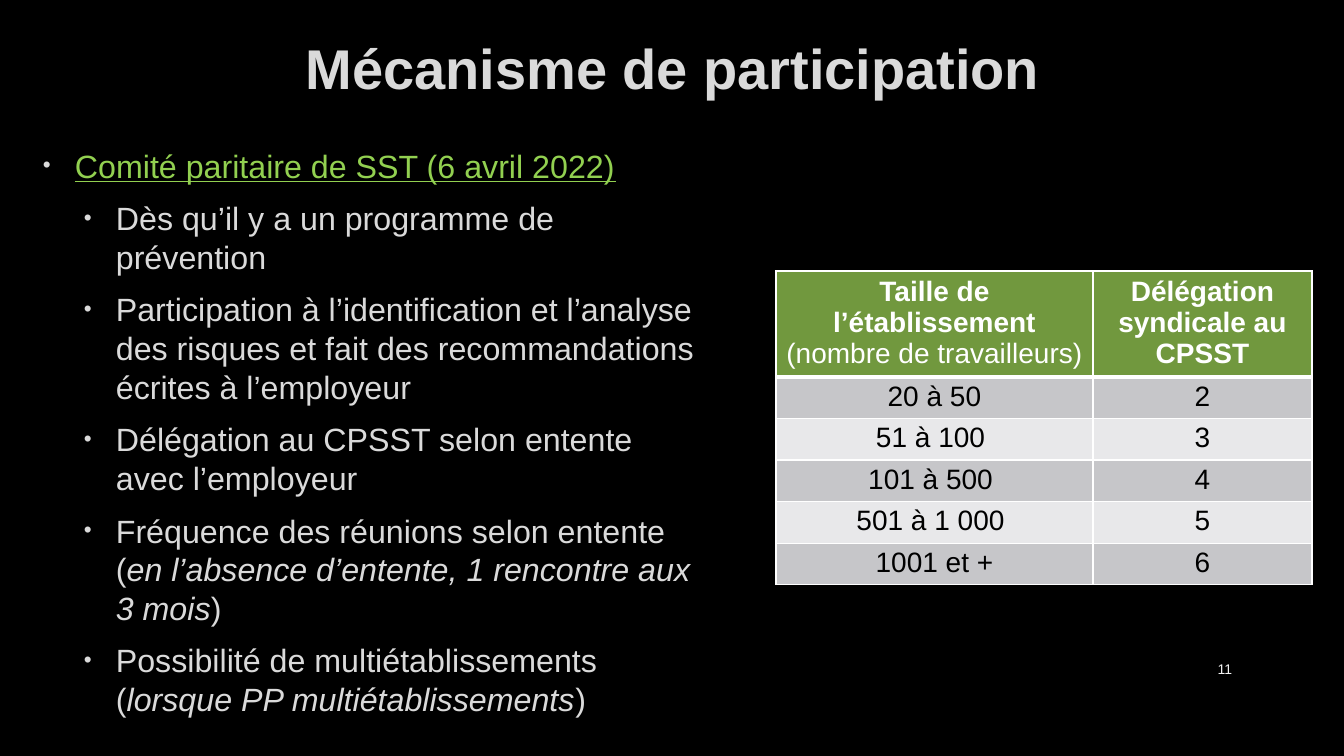
from lxml.etree import SubElement
from pptx import Presentation
from pptx.dml.color import RGBColor
from pptx.enum.text import MSO_ANCHOR as Anchor, PP_ALIGN as Align
from pptx.oxml.ns import qn
from pptx.util import Pt

PX = 914400 / 100.8
LIGHT, LIME, WHITE, BLACK = "DADADA", "92D050", "FFFFFF", "000000"
HEADER, BANDS = "71983E", ("C6C6C9", "E8E8EA")

POINTS = [
    ["Dès qu’il y a un programme de prévention"],
    ["Participation à l’identification et l’analyse des risques "
     "et fait des recommandations écrites à l’employeur"],
    ["Délégation au CPSST selon entente avec l’employeur"],
    ["Fréquence des réunions selon entente (",
     "en l’absence d’entente, 1 rencontre aux 3 mois", ")"],
    ["Possibilité de multiétablissements (",
     "lorsque PP multiétablissements", ")"],
]
HEADINGS = [["Taille de l’établissement", "(nombre de travailleurs)"],
            ["Délégation syndicale au CPSST"]]
DELEGATES = [("20 à 50", "2"), ("51 à 100 ", "3"), ("101 à 500 ", "4"),
             ("501 à 1 000 ", "5"), ("1001 et +", "6")]


def px(n):
    """Turn pixels into EMU."""
    return round(n * PX)


def rgb(color):
    """Turn a hex string into a colour."""
    return RGBColor.from_string(color)


def add_run(p, text, size, color, bold=False, italic=False, underline=False):
    """Add one formatted run to a paragraph."""
    r = p.add_run()
    r.text = text
    f = r.font
    f.name, f.size, f.color.rgb = "Arial", Pt(size), rgb(color)
    f.bold, f.italic, f.underline = bold, italic, underline


def add_box(s, box, anchor=Anchor.TOP):
    """Add a wrapping text box and return its text frame."""
    tf = s.shapes.add_textbox(*map(px, box)).text_frame
    tf.word_wrap, tf.vertical_anchor = True, anchor
    return tf


def add_line(s, box, align, text, size, color, bold=False):
    """Add a vertically centred single-line text."""
    p = add_box(s, box, Anchor.MIDDLE).paragraphs[0]
    p.alignment = align
    add_run(p, text, size, color, bold)


def set_bullet(p, level):
    """Give a paragraph its indent, spacing and small bullet."""
    p.level = level
    p.space_before, p.space_after = Pt(4), Pt(6)
    pPr = p._p.get_or_add_pPr()
    pPr.set("marL", str(px(32 + 41 * level)))
    pPr.set("indent", str(px(-32)))
    clr = SubElement(pPr, qn("a:buClr"))
    SubElement(clr, qn("a:srgbClr"), val=LIGHT)
    SubElement(pPr, qn("a:buSzPct"), val="70000")
    SubElement(pPr, qn("a:buFont"), typeface="Arial")
    SubElement(pPr, qn("a:buChar"), char="•")


def add_points(s, box):
    """Add the committee heading and its bulleted points."""
    tf = add_box(s, box)
    p = tf.paragraphs[0]
    set_bullet(p, 0)
    add_run(p, "Comité paritaire de SST (6 avril 2022)", 23, LIME, underline=True)
    for parts in POINTS:
        p = tf.add_paragraph()
        set_bullet(p, 1)
        for i, text in enumerate(parts):
            add_run(p, text, 23, LIGHT, italic=i == 1)


def set_borders(cell, top, bottom):
    """Draw white borders around a cell, widths in points."""
    tcPr = cell._tc.get_or_add_tcPr()
    for i, (side, width) in enumerate(zip("LRTB", (1, 1, top, bottom))):
        ln = tcPr.makeelement(qn(f"a:ln{side}"), {"w": str(Pt(width))})
        fill = SubElement(ln, qn("a:solidFill"))
        SubElement(fill, qn("a:srgbClr"), val=WHITE)
        tcPr.insert(i, ln)


def fill_cell(cell, lines, row):
    """Write a cell's lines and give it the look of its row."""
    head = row == 0
    cell.fill.solid()
    cell.fill.fore_color.rgb = rgb(HEADER if head else BANDS[(row - 1) % 2])
    cell.margin_left = cell.margin_right = px(9)
    cell.margin_top, cell.margin_bottom = px(5 if head else 4), px(0 if head else 4)
    set_borders(cell, 3 if row == 1 else 1, 3 if head else 1)
    tf = cell.text_frame
    for i, text in enumerate(lines):
        p = tf.add_paragraph() if i else tf.paragraphs[0]
        p.alignment = Align.CENTER
        add_run(p, text, 20, WHITE if head else BLACK, bold=head and i == 0)


def add_delegates(s, box):
    """Add the table of union delegates by workplace size."""
    x, y, w, h = box
    head_h, first_w = 104, 317
    rows = [HEADINGS] + [[[text] for text in row] for row in DELEGATES]
    table = s.shapes.add_table(len(rows), 2, *map(px, box)).table
    for col, width in zip(table.columns, (first_w, w - first_w)):
        col.width = px(width)
    for i, row in enumerate(rows):
        table.rows[i].height = px((h - head_h) / len(DELEGATES) if i else head_h)
        for j, lines in enumerate(row):
            fill_cell(table.cell(i, j), lines, i)


def build_slide(prs):
    """Add the slide on the participation mechanism."""
    s = prs.slides.add_slide(prs.slide_layouts[6])
    s.background.fill.solid()
    s.background.fill.fore_color.rgb = rgb(BLACK)
    add_line(s, (102, 14, 1141, 107), Align.CENTER,
             "Mécanisme de participation", 40, LIGHT, bold=True)
    add_points(s, (33, 141, 681, 589))
    add_delegates(s, (776, 271, 536, 311))
    add_line(s, (1159, 649, 83, 40), Align.RIGHT, "11", 10, "F2F2F2")


def main():
    """Build and save the presentation."""
    prs = Presentation()
    prs.slide_width, prs.slide_height = px(1344), px(756)
    build_slide(prs)
    prs.save("out.pptx")


if __name__ == "__main__":
    main()
